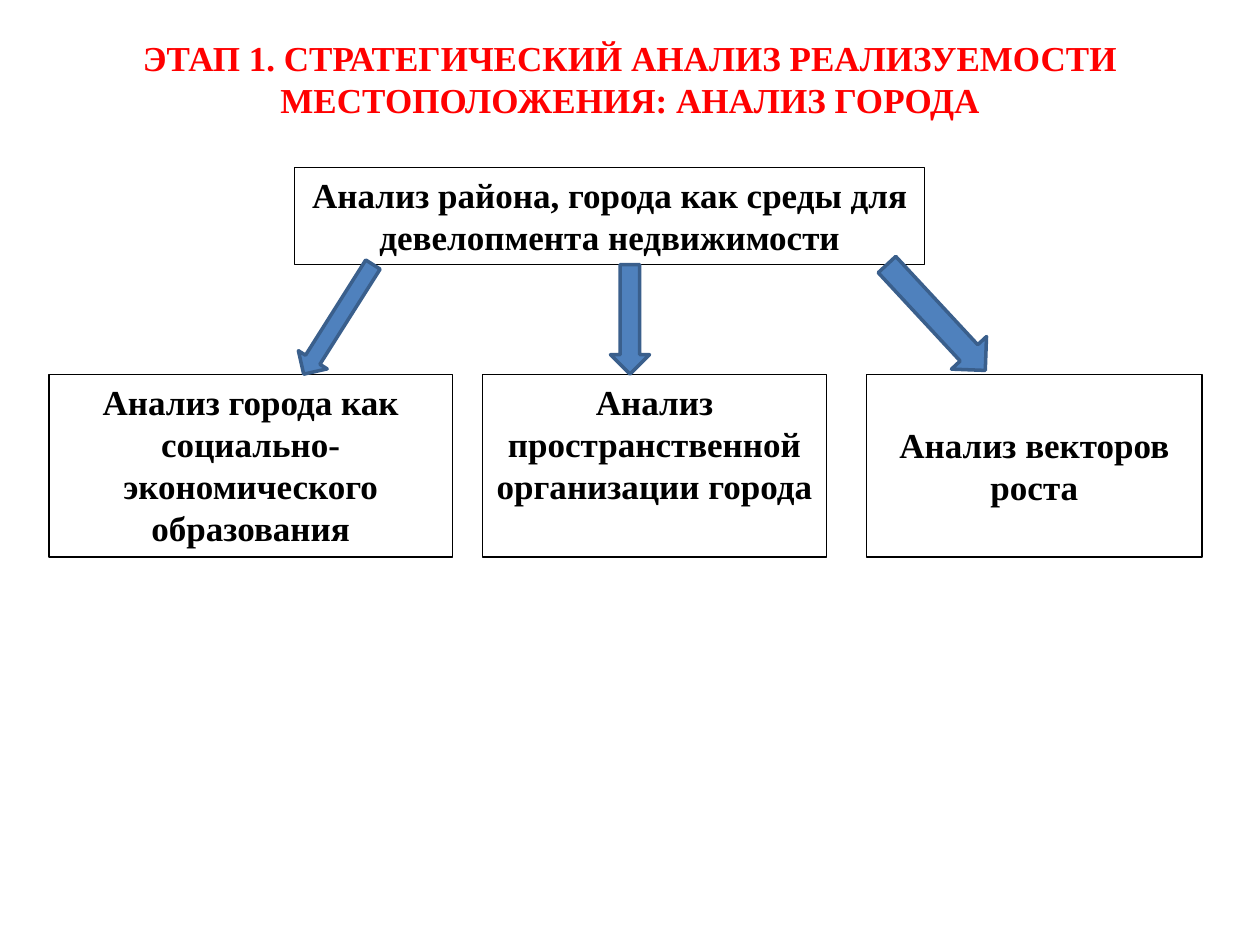
import math
import pptx
import pptx.util
import pptx.dml.color
import pptx.enum.shapes
import pptx.enum.text

Inches, Pt = pptx.util.Inches, pptx.util.Pt
RGBColor = pptx.dml.color.RGBColor
SHAPE = pptx.enum.shapes.MSO_SHAPE
ANCHOR = pptx.enum.text.MSO_ANCHOR

RED = RGBColor(0xFF, 0x00, 0x00)
BLACK = RGBColor(0x00, 0x00, 0x00)
BLUE = RGBColor(0x4F, 0x81, 0xBD)
DARK_BLUE = RGBColor(0x3A, 0x5F, 0x8C)

WIDTH, HEIGHT = 10, 7.5
MARGIN = 0.39
TOPIC_TOP, TOPIC_HEIGHT = 1.33, 0.77
BRANCH_TOP, BRANCH_HEIGHT = 2.97, 1.45
TOPIC_BOTTOM = TOPIC_TOP + TOPIC_HEIGHT

TITLE = "ЭТАП 1. СТРАТЕГИЧЕСКИЙ АНАЛИЗ РЕАЛИЗУЕМОСТИ МЕСТОПОЛОЖЕНИЯ: АНАЛИЗ ГОРОДА"
TOPIC = "Анализ района, города как среды для девелопмента недвижимости"
BRANCHES = [
    ("Анализ города как социально-экономического образования", MARGIN, 3.2, ANCHOR.TOP),
    ("Анализ пространственной организации города", 3.83, 2.73, ANCHOR.TOP),
    ("Анализ векторов роста", 6.88, 2.66, ANCHOR.MIDDLE),
]
ARROWS = [
    ((2.96, TOPIC_BOTTOM), (2.41, BRANCH_TOP), 0.27),
    ((WIDTH / 2, TOPIC_BOTTOM), (WIDTH / 2, BRANCH_TOP), 0.31),
    ((7.04, TOPIC_BOTTOM), (7.82, 2.94), 0.38),
]


def write(holder, text, color, anchor):
    frame = holder.text_frame
    frame.word_wrap = True
    frame.vertical_anchor = anchor
    paragraph = frame.paragraphs[0]
    paragraph.alignment = pptx.enum.text.PP_ALIGN.CENTER
    run = paragraph.add_run()
    run.text = text
    run.font.name = "Times New Roman"
    run.font.size = Pt(20)
    run.font.bold = True
    run.font.color.rgb = color


def add_box(slide, text, left, top, width, height, anchor):
    box = slide.shapes.add_shape(
        SHAPE.RECTANGLE, Inches(left), Inches(top), Inches(width), Inches(height))
    box.shadow.inherit = False
    box.fill.background()
    box.line.color.rgb = BLACK
    box.line.width = Pt(0.75)
    write(box, text, BLACK, anchor)


def add_arrow(slide, tail, tip, width):
    dx, dy = tip[0] - tail[0], tip[1] - tail[1]
    length = math.hypot(dx, dy)
    left = (tail[0] + tip[0] - width) / 2
    top = (tail[1] + tip[1] - length) / 2
    arrow = slide.shapes.add_shape(
        SHAPE.DOWN_ARROW, Inches(left), Inches(top), Inches(width), Inches(length))
    arrow.rotation = math.degrees(math.atan2(-dx, dy))
    arrow.shadow.inherit = False
    arrow.fill.solid()
    arrow.fill.fore_color.rgb = BLUE
    arrow.line.color.rgb = DARK_BLUE
    arrow.line.width = Pt(2)


def main():
    deck = pptx.Presentation()
    deck.slide_width, deck.slide_height = Inches(WIDTH), Inches(HEIGHT)
    slide = deck.slides.add_slide(deck.slide_layouts[6])

    title = slide.shapes.add_textbox(
        Inches(MARGIN), Inches(0.23), Inches(WIDTH - 2 * MARGIN), Inches(0.79))
    write(title, TITLE, RED, ANCHOR.MIDDLE)

    add_box(slide, TOPIC, 2.34, TOPIC_TOP, WIDTH / 2, TOPIC_HEIGHT, ANCHOR.TOP)
    for text, left, width, anchor in BRANCHES:
        add_box(slide, text, left, BRANCH_TOP, width, BRANCH_HEIGHT, anchor)
    for tail, tip, width in ARROWS:
        add_arrow(slide, tail, tip, width)

    deck.save("out.pptx")


if __name__ == "__main__":
    main()
